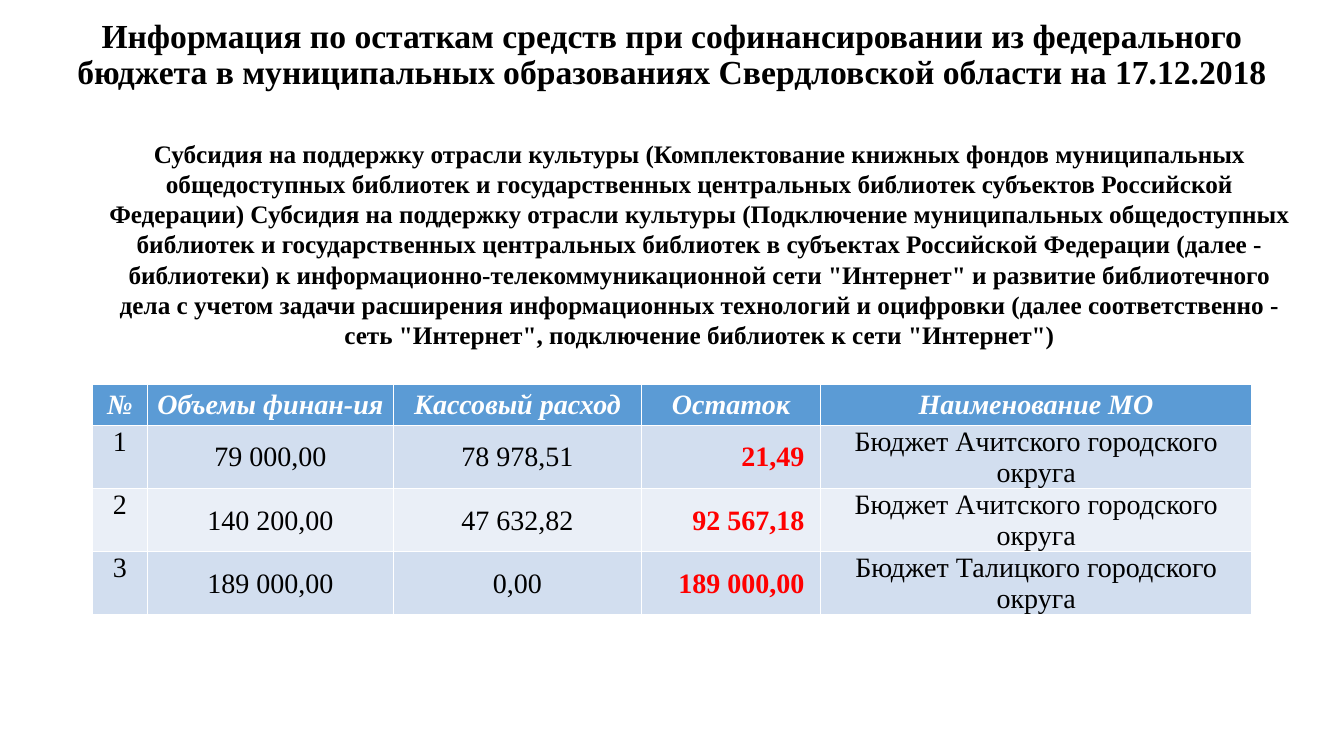
"""Build a slide on unspent federal co-financing in Sverdlovsk region municipalities."""
from dataclasses import dataclass

from pptx import Presentation
from pptx.dml.color import RGBColor
from pptx.enum.text import MSO_ANCHOR, MSO_AUTO_SIZE, PP_ALIGN
from pptx.slide import Slide
from pptx.table import _Cell
from pptx.text.text import _Paragraph
from pptx.util import Pt

FONT = "Times New Roman"
BLACK, WHITE, RED = "000000", "FFFFFF", "FF0000"
HEADER_FILL = "5B9BD5"
BAND_FILLS = ("D2DEEF", "EAEFF7")
HEADER_HEIGHT, BODY_HEIGHT = 29.5, 45.2

HEADING = (
    "Информация по остаткам средств при софинансировании из федерального "
    "бюджета в муниципальных образованиях Свердловской области на 17.12.2018"
)
SUBSIDIES = (
    "Субсидия на поддержку отрасли культуры (Комплектование книжных фондов муниципальных "
    "общедоступных библиотек и государственных центральных библиотек субъектов Российской "
    "Федерации) Субсидия на поддержку отрасли культуры (Подключение муниципальных общедоступных "
    "библиотек и государственных центральных библиотек в субъектах Российской Федерации (далее - "
    "библиотеки) к информационно-телекоммуникационной сети \"Интернет\" и развитие библиотечного "
    "дела с учетом задачи расширения информационных технологий и оцифровки (далее соответственно - "
    "сеть \"Интернет\", подключение библиотек к сети \"Интернет\")"
)


@dataclass(frozen=True)
class Column:
    header: str
    width: float
    color: str = BLACK
    bold: bool = False
    align: PP_ALIGN = PP_ALIGN.CENTER
    anchor: MSO_ANCHOR = MSO_ANCHOR.MIDDLE
    right_inset: float = 0.7


COLUMNS = (
    Column("№", 39, anchor=MSO_ANCHOR.TOP),
    Column("Объемы финан-ия", 176),
    Column("Кассовый расход", 177),
    Column("Остаток", 128, RED, True, PP_ALIGN.RIGHT, right_inset=11.5),
    Column("Наименование МО", 308),
)
BUDGETS = (
    ("1", "79 000,00", "78 978,51", "21,49", "Бюджет Ачитского городского округа"),
    ("2", "140 200,00", "47 632,82", "92 567,18", "Бюджет Ачитского городского округа"),
    ("3", "189 000,00", "0,00", "189 000,00", "Бюджет Талицкого городского округа"),
)


def rgb(color: str) -> RGBColor:
    return RGBColor.from_string(color)


def format_paragraph(paragraph: _Paragraph, size: float, color: str = BLACK, bold: bool = True,
                     italic: bool = False, align: PP_ALIGN = PP_ALIGN.CENTER) -> None:
    paragraph.alignment = align
    font = paragraph.font
    font.name, font.size, font.bold, font.italic = FONT, Pt(size), bold, italic
    font.color.rgb = rgb(color)


def set_title(slide: Slide) -> None:
    title = slide.shapes.title
    title.left, title.top, title.width, title.height = Pt(27.4), Pt(15.8), Pt(905), Pt(47.5)
    frame = title.text_frame
    frame.text = HEADING
    frame.word_wrap = True
    frame.auto_size = MSO_AUTO_SIZE.NONE
    frame.vertical_anchor = MSO_ANCHOR.MIDDLE
    frame.paragraphs[0].line_spacing = 0.9
    format_paragraph(frame.paragraphs[0], 24)


def add_subsidies(slide: Slide) -> None:
    frame = slide.shapes.add_textbox(Pt(66.2), Pt(95), Pt(867), Pt(160)).text_frame
    frame.word_wrap = True
    frame.auto_size = MSO_AUTO_SIZE.SHAPE_TO_FIT_TEXT
    frame.text = SUBSIDIES
    format_paragraph(frame.paragraphs[0], 18)


def fill_cell(cell: _Cell, text: str, fill: str, anchor: MSO_ANCHOR,
              right_inset: float = 0.7) -> _Paragraph:
    cell.text = text
    cell.fill.solid()
    cell.fill.fore_color.rgb = rgb(fill)
    cell.vertical_anchor = anchor
    cell.margin_left = cell.margin_top = Pt(0.7)
    cell.margin_right, cell.margin_bottom = Pt(right_inset), Pt(0)
    return cell.text_frame.paragraphs[0]


def add_budget_table(slide: Slide) -> None:
    width = sum(column.width for column in COLUMNS)
    height = HEADER_HEIGHT + BODY_HEIGHT * len(BUDGETS)
    table = slide.shapes.add_table(len(BUDGETS) + 1, len(COLUMNS), Pt(66.2), Pt(274.3),
                                   Pt(width), Pt(height)).table
    table.rows[0].height = Pt(HEADER_HEIGHT)
    for index, column in enumerate(COLUMNS):
        table.columns[index].width = Pt(column.width)
        header = fill_cell(table.cell(0, index), column.header, HEADER_FILL, MSO_ANCHOR.MIDDLE)
        format_paragraph(header, 20, WHITE, italic=True)
    for row, budget in enumerate(BUDGETS, start=1):
        table.rows[row].height = Pt(BODY_HEIGHT)
        band = BAND_FILLS[(row - 1) % len(BAND_FILLS)]
        for index, (column, value) in enumerate(zip(COLUMNS, budget)):
            entry = fill_cell(table.cell(row, index), value, band, column.anchor, column.right_inset)
            format_paragraph(entry, 20, column.color, column.bold, align=column.align)


def main() -> None:
    presentation = Presentation()
    presentation.slide_width, presentation.slide_height = Pt(960), Pt(540)
    slide = presentation.slides.add_slide(presentation.slide_layouts[5])
    set_title(slide)
    add_budget_table(slide)
    add_subsidies(slide)
    presentation.save("out.pptx")


if __name__ == "__main__":
    main()
